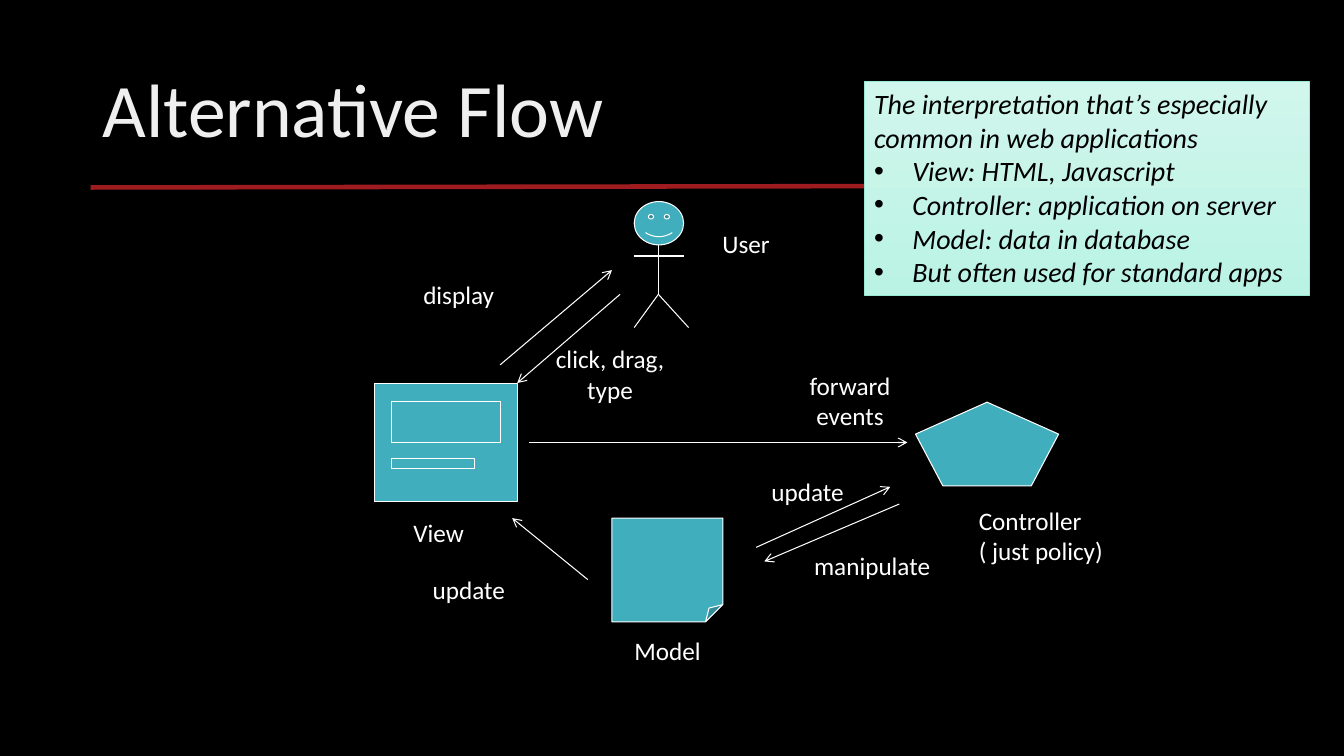
from dataclasses import dataclass

from lxml import etree
from pptx import Presentation
from pptx.dml.color import RGBColor
from pptx.enum import shapes, text
from pptx.oxml.ns import qn
from pptx.util import Inches, Pt

MSO = shapes.MSO_SHAPE


@dataclass(frozen=True)
class Theme:
    """Colours, font and type sizes of the slide."""
    font: str = "Calibri"
    back: str = "000000"
    title: str = "EFEFEF"
    ink: str = "FFFFFF"
    teal: str = "41AEBD"
    rule: str = "9E1B20"
    note_ink: str = "000000"
    note_top: str = "D1F6EC"
    note_bottom: str = "BAF3E4"
    note_edge: str = "97E9D5"
    title_size: int = 54
    note_size: int = 20
    label_size: int = 18
    hairline: float = 0.75


T = Theme()


def rgb(value):
    """Turn a hex string into a colour."""
    return RGBColor.from_string(value)


def add_run(p, words, size, color, italic=False):
    """Append one styled run to a paragraph."""
    r = p.add_run()
    r.text = words
    r.font.name, r.font.size, r.font.italic = T.font, Pt(size), italic
    r.font.color.rgb = rgb(color)


def add_bullet(p, indent=0.38):
    """Give a paragraph a hanging round bullet."""
    pPr = p._p.get_or_add_pPr()
    pPr.set("marL", str(Inches(indent)))
    pPr.set("indent", str(-Inches(indent)))
    etree.SubElement(pPr, qn("a:buFont")).set("typeface", "Arial")
    etree.SubElement(pPr, qn("a:buChar")).set("char", "•")


def add_lines(tf, lines, size, color, align=text.PP_ALIGN.LEFT, italic=False, bullets_from=None):
    """Fill a text frame with one paragraph per line."""
    tf.word_wrap = True
    for i, words in enumerate(lines):
        p = tf.paragraphs[0] if i == 0 else tf.add_paragraph()
        p.alignment = align
        if bullets_from is not None and i >= bullets_from:
            add_bullet(p)
        add_run(p, words, size, color, italic)


def add_figure(parent, kind, x, y, w, h):
    """Draw a teal preset shape with a thin white outline."""
    sp = parent.add_shape(kind, Inches(x), Inches(y), Inches(w), Inches(h))
    sp.shadow.inherit = False
    sp.fill.solid()
    sp.fill.fore_color.rgb = rgb(T.teal)
    sp.line.color.rgb = rgb(T.ink)
    sp.line.width = Pt(T.hairline)


def add_line(parent, start, end, color=T.ink, width=T.hairline, arrow=False):
    """Draw a straight line, with an open arrowhead at its end if asked."""
    c = parent.add_connector(shapes.MSO_CONNECTOR.STRAIGHT, *map(Inches, start + end))
    c.line.color.rgb = rgb(color)
    c.line.width = Pt(width)
    spPr = c.element.spPr
    if arrow:
        etree.SubElement(spPr.find(qn("a:ln")), qn("a:tailEnd")).set("type", "arrow")
    etree.SubElement(spPr, qn("a:effectLst"))


def add_label(s, lines, x, y, w, h=0.4, align=text.PP_ALIGN.CENTER):
    """Place a white caption."""
    tf = s.shapes.add_textbox(Inches(x), Inches(y), Inches(w), Inches(h)).text_frame
    add_lines(tf, lines, T.label_size, T.ink, align)


def add_title(s, words):
    """Place the slide title and the red rule below it."""
    add_line(s.shapes, (0.9, 1.86), (12.42, 1.84), T.rule, 3.25)
    tf = s.shapes.add_textbox(Inches(0.92), Inches(0.4), Inches(11.5), Inches(1.45)).text_frame
    tf.vertical_anchor = text.MSO_ANCHOR.MIDDLE
    add_lines(tf, [words], T.title_size, T.title)
    tf.paragraphs[0].line_spacing = 0.9


def add_user(s):
    """Draw the stick figure of the user."""
    g = s.shapes.add_group_shape().shapes
    add_figure(g, MSO.SMILEY_FACE, 6.29, 2, 0.49, 0.43)
    hip = (6.53, 2.92)
    add_line(g, (6.53, 2.43), hip)
    for foot in (6.29, 6.83):
        add_line(g, hip, (foot, 3.25))
    add_line(g, (6.29, 2.54), (6.78, 2.54))


def add_view(s):
    """Draw the window that stands for the view."""
    g = s.shapes.add_group_shape().shapes
    for box in ((3.71, 3.8, 1.42, 1.18), (3.88, 3.98, 1.08, 0.41), (3.88, 4.55, 0.83, 0.1)):
        add_figure(g, MSO.RECTANGLE, *box)


def add_note(s, lines):
    """Draw the pale green note with an intro line and bullets."""
    sp = s.shapes.add_shape(MSO.RECTANGLE, Inches(8.57), Inches(0.81), Inches(4.42), Inches(2.12))
    sp.shadow.inherit = False
    sp.fill.gradient()
    sp.fill.gradient_angle = 270
    for stop, color in zip(sp.fill.gradient_stops, (T.note_top, T.note_bottom)):
        stop.color.rgb = rgb(color)
    sp.line.color.rgb = rgb(T.note_edge)
    sp.line.width = Pt(0.5)
    sp.text_frame.vertical_anchor = text.MSO_ANCHOR.TOP
    add_lines(sp.text_frame, lines, T.note_size, T.note_ink, italic=True, bullets_from=1)


def main():
    """Build the slide and save it."""
    prs = Presentation()
    prs.slide_width, prs.slide_height = Inches(13.33), Inches(7.5)
    s = prs.slides.add_slide(prs.slide_layouts[6])
    s.background.fill.solid()
    s.background.fill.fore_color.rgb = rgb(T.back)

    add_title(s, "Alternative Flow")
    add_user(s)
    add_view(s)
    add_figure(s.shapes, MSO.REGULAR_PENTAGON, 9.08, 3.99, 1.42, 0.83)
    add_figure(s.shapes, MSO.FOLDED_CORNER, 6.07, 5.14, 1.1, 1.03)

    for start, end in (
        ((6.15, 2.92), (5.13, 3.8)),
        ((4.96, 3.62), (6.07, 2.68)),
        ((5.25, 4.39), (9, 4.39)),
        ((8.92, 5), (7.58, 5.57)),
        ((7.5, 5.43), (8.83, 4.83)),
        ((5.83, 5.75), (5.08, 5.14)),
    ):
        add_line(s.shapes, start, end, arrow=True)

    for words, x, y, w in (
        ("User", 6.15, 2.22, 2.5),
        ("View", 3.39, 5.08, 1.92),
        ("Model", 5.66, 6.25, 1.92),
        ("display", 3.71, 2.72, 1.68),
        ("manipulate", 7.81, 5.41, 1.68),
        ("update", 3.81, 5.65, 1.68),
        ("update", 7.17, 4.68, 1.68),
    ):
        add_label(s, [words], x, y, w)
    add_label(s, ["click, drag, type"], 5.39, 3.36, 1.32, 0.71)
    add_label(s, ["forward events"], 7.77, 3.62, 1.32, 0.71)
    add_label(s, ["Controller", "( just policy)"], 9.61, 4.96, 1.76, 0.71, text.PP_ALIGN.LEFT)

    add_note(s, [
        "The interpretation that’s especially common in web applications",
        "View: HTML, Javascript",
        "Controller: application on server",
        "Model: data in database",
        "But often used for standard apps",
    ])
    prs.save("out.pptx")


if __name__ == "__main__":
    main()
